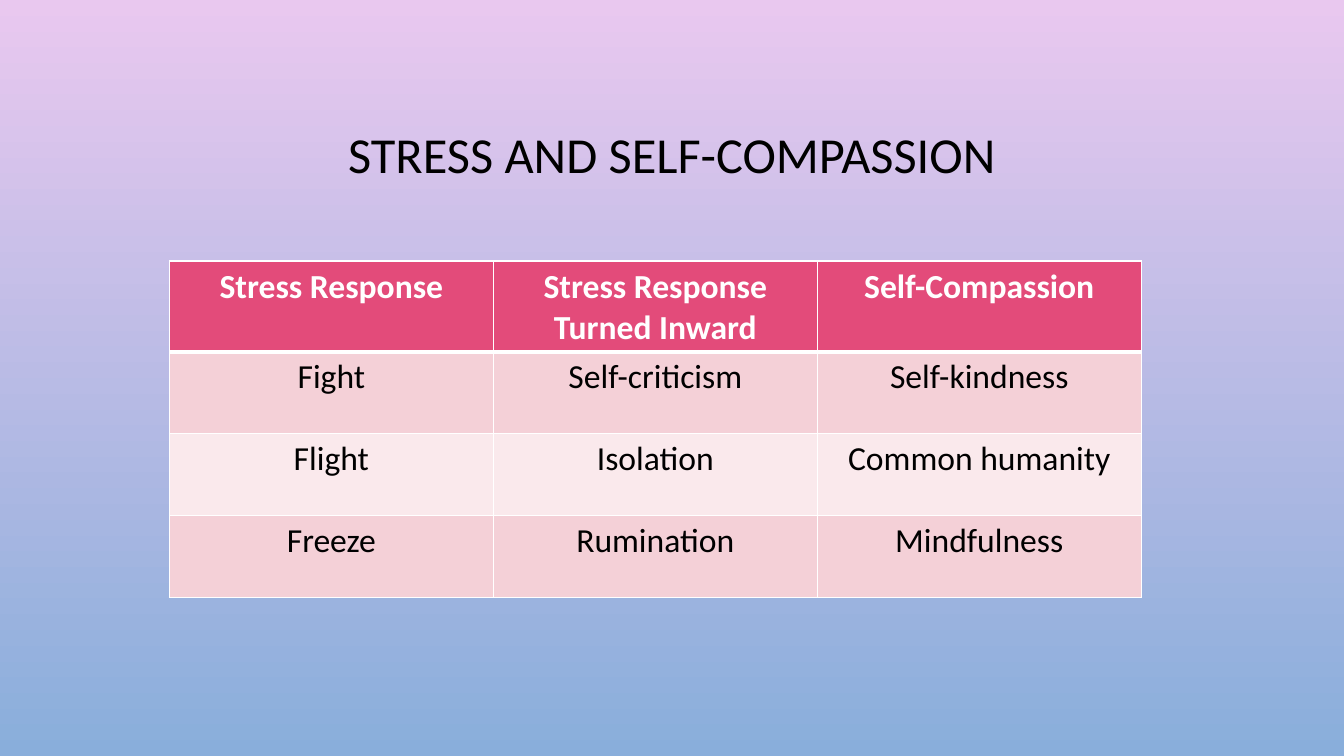
from lxml.etree import SubElement
from pptx import Presentation
from pptx.dml.color import RGBColor
from pptx.enum.text import MSO_ANCHOR, PP_ALIGN
from pptx.oxml.ns import qn
from pptx.util import Inches, Pt

FONT = "Calibri"
BLACK = RGBColor(0x00, 0x00, 0x00)
WHITE = RGBColor(0xFF, 0xFF, 0xFF)
SKY_TOP = RGBColor(0xE9, 0xC8, 0xEF)
SKY_BOTTOM = RGBColor(0x89, 0xAE, 0xDB)
HEADER_PINK = RGBColor(0xE3, 0x4B, 0x7A)
BANDS = (RGBColor(0xF4, 0xD0, 0xD7), RGBColor(0xFA, 0xE9, 0xEC))

ROWS = (
    ("Stress Response", "Stress Response Turned Inward", "Self-Compassion"),
    ("Fight", "Self-criticism", "Self-kindness"),
    ("Flight", "Isolation", "Common humanity"),
    ("Freeze", "Rumination", "Mindfulness"),
)


def paint_background(slide):
    fill = slide.background.fill
    fill.gradient()
    fill.gradient_angle = 270
    for stop, color in zip(fill.gradient_stops, (SKY_TOP, SKY_BOTTOM)):
        stop.color.rgb = color


def style_paragraph(paragraph, size, color, bold=False):
    paragraph.alignment = PP_ALIGN.CENTER
    font = paragraph.font
    font.name = FONT
    font.size = Pt(size)
    font.bold = bold
    font.color.rgb = color


def add_title(slide, left, top, width, height):
    box = slide.shapes.add_textbox(left, top, width, height)
    frame = box.text_frame
    frame.word_wrap = True
    frame.vertical_anchor = MSO_ANCHOR.MIDDLE
    paragraph = frame.paragraphs[0]
    paragraph.text = "STRESS AND SELF-COMPASSION"
    paragraph.line_spacing = 0.9
    style_paragraph(paragraph, 36, BLACK)


def set_borders(cell, top, bottom):
    """Draw white cell borders, with the top and bottom widths in points."""
    properties = cell._tc.get_or_add_tcPr()
    for tag, width in (("lnL", 1), ("lnR", 1), ("lnT", top), ("lnB", bottom)):
        line = SubElement(properties, qn(f"a:{tag}"), w=str(Pt(width)))
        SubElement(SubElement(line, qn("a:solidFill")), qn("a:srgbClr"), val=str(WHITE))


def add_response_table(slide, left, top, width, height):
    header_height = Inches(0.9)
    body_height = (height - header_height) // (len(ROWS) - 1)
    table = slide.shapes.add_table(
        len(ROWS), len(ROWS[0]), left, top, width, height
    ).table
    for row_index, texts in enumerate(ROWS):
        is_header = row_index == 0
        table.rows[row_index].height = header_height if is_header else body_height
        for column_index, text in enumerate(texts):
            cell = table.cell(row_index, column_index)
            cell.text = text
            style_paragraph(
                cell.text_frame.paragraphs[0], 24, WHITE if is_header else BLACK, is_header
            )
            set_borders(cell, 3 if row_index == 1 else 1, 3 if is_header else 1)
            cell.fill.solid()
            cell.fill.fore_color.rgb = (
                HEADER_PINK if is_header else BANDS[(row_index - 1) % 2]
            )


def main():
    presentation = Presentation()
    presentation.slide_width = Inches(13.33)
    presentation.slide_height = Inches(7.5)
    slide = presentation.slides.add_slide(presentation.slide_layouts[6])
    paint_background(slide)
    add_title(slide, Inches(1), Inches(0.68), Inches(11.33), Inches(1.75))
    add_response_table(slide, Inches(1.68), Inches(2.59), Inches(9.64), Inches(3.34))
    presentation.save("out.pptx")


if __name__ == "__main__":
    main()
